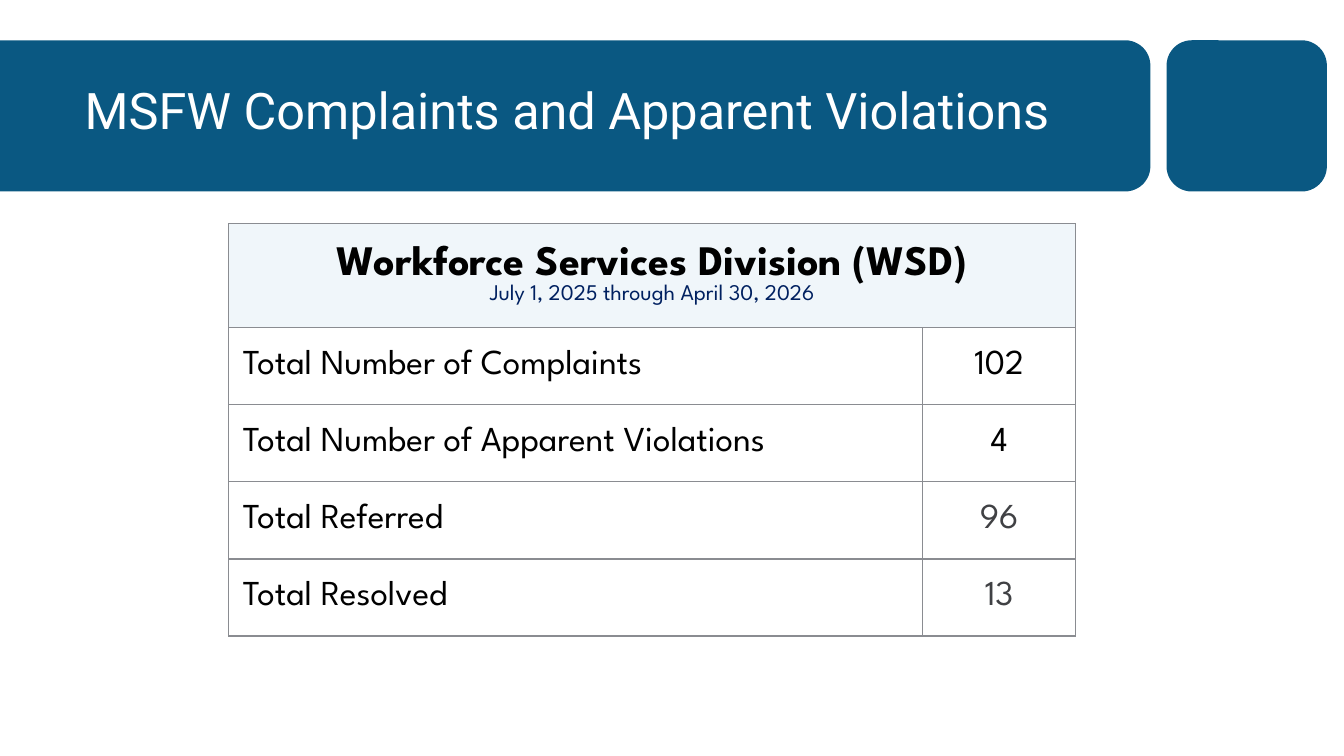
from math import cos, pi, sin

from lxml import etree
from pptx import Presentation
from pptx.dml.color import RGBColor
from pptx.enum.shapes import MSO_SHAPE
from pptx.enum.text import MSO_ANCHOR, MSO_AUTO_SIZE, PP_ALIGN
from pptx.oxml.ns import qn
from pptx.util import Inches, Pt

LEFT, CENTER = PP_ALIGN.LEFT, PP_ALIGN.CENTER
MIDDLE = MSO_ANCHOR.MIDDLE

THEME = {
    "band": "0A5882", "header_fill": "E3EFF6", "header_alpha": 51, "border": "8A8C91",
    "title": {"name": "Roboto", "size": Pt(36), "bold": False, "color": "FFFFFF"},
    "heading": {"name": "League Spartan", "size": Pt(30), "bold": True, "color": "000000"},
    "period": {"name": "League Spartan", "size": Pt(16), "bold": False, "color": "002060"},
    "body": {"name": "League Spartan", "size": Pt(25), "bold": False, "color": "000000"},
    "muted": {"name": "League Spartan", "size": Pt(25), "bold": False, "color": "404144"},
}


def write(p, text, style, align):
    """Put one formatted run into a paragraph."""
    p.alignment = align
    r = p.add_run()
    r.text = text
    for key, value in THEME[style].items():
        if key == "color":
            r.font.color.rgb = RGBColor.from_string(value)
        else:
            setattr(r.font, key, value)


def format_cell(cell):
    """Set margins, anchor, no fill and thin borders."""
    cell.margin_left = cell.margin_right = Inches(0.14)
    cell.margin_top = cell.margin_bottom = Inches(0.07)
    cell.vertical_anchor = MIDDLE
    cell.fill.background()
    tc_pr = cell._tc.get_or_add_tcPr()
    for i, side in enumerate(("a:lnL", "a:lnR", "a:lnT", "a:lnB")):
        ln = etree.Element(qn(side), w=str(Pt(1)))
        fill = etree.SubElement(ln, qn("a:solidFill"))
        etree.SubElement(fill, qn("a:srgbClr"), val=THEME["border"])
        tc_pr.insert(i, ln)


prs = Presentation()
prs.slide_width, prs.slide_height = Inches(13.33), Inches(7.5)
s = prs.slides.add_slide(prs.slide_layouts[5])

# Title band, rounded on the right, and the block beside it
TOP, HEIGHT, RADIUS = 0.4, 1.5, 0.25
BAND_RIGHT, GAP, BLOCK_WIDTH = 11.41, 0.16, 1.59
STEPS = 12
corners = [(TOP + RADIUS, -pi / 2), (TOP + HEIGHT - RADIUS, 0)]
outline = [(BAND_RIGHT - RADIUS + RADIUS * cos(start + pi / 2 * i / STEPS),
            cy + RADIUS * sin(start + pi / 2 * i / STEPS))
           for cy, start in corners for i in range(STEPS + 1)]
builder = s.shapes.build_freeform(0, Inches(TOP), scale=1.0)
builder.add_line_segments([(Inches(x), Inches(y)) for x, y in outline]
                          + [(0, Inches(TOP + HEIGHT))], close=True)
band = builder.convert_to_shape()
block = s.shapes.add_shape(MSO_SHAPE.ROUNDED_RECTANGLE, Inches(BAND_RIGHT + GAP), Inches(TOP),
                           Inches(BLOCK_WIDTH), Inches(HEIGHT))
block.adjustments[0] = RADIUS / HEIGHT
for sp in (band, block):
    sp.shadow.inherit = False
    sp.fill.solid()
    sp.fill.fore_color.rgb = RGBColor.from_string(THEME["band"])
    sp.line.fill.background()

# Title, brought in front of the band
title = s.shapes.title
title.left, title.top, title.width, title.height = map(Inches, (0.74, 0.53, 10.51, 1.18))
title.element.getparent().append(title.element)
tf = title.text_frame
tf.word_wrap = True
tf.auto_size = MSO_AUTO_SIZE.NONE
tf.vertical_anchor = MIDDLE
tf.paragraphs[0].line_spacing = 0.9
write(tf.paragraphs[0], "MSFW Complaints and Apparent Violations", "title", LEFT)

# Complaints table
totals = [
    ("Total Number of Complaints", "102", "body"),
    ("Total Number of Apparent Violations", "4", "body"),
    ("Total Referred", "96", "muted"),
    ("Total Resolved", "13", "muted"),
]
col_widths = (6.88, 1.52)
row_heights = [1.03] + [0.765] * len(totals)
table = s.shapes.add_table(len(row_heights), len(col_widths), Inches(2.27), Inches(2.22),
                           Inches(sum(col_widths)), Inches(sum(row_heights))).table
table.first_row = table.horz_banding = False
for column, width in zip(table.columns, col_widths):
    column.width = Inches(width)
for row, height in zip(table.rows, row_heights):
    row.height = Inches(height)
for cell in table.iter_cells():
    format_cell(cell)

# Header row across both columns, with a translucent fill
header = table.cell(0, 0)
header.merge(table.cell(0, 1))
header.fill.solid()
header.fill.fore_color.rgb = RGBColor.from_string(THEME["header_fill"])
color = header._tc.tcPr.find(qn("a:solidFill")).find(qn("a:srgbClr"))
etree.SubElement(color, qn("a:alpha"), val=str(THEME["header_alpha"] * 1000))
tf = header.text_frame
write(tf.paragraphs[0], "Workforce Services Division (WSD)", "heading", CENTER)
write(tf.add_paragraph(), "July 1, 2025 through April 30, 2026", "period", CENTER)

# Totals
for i, (label, value, value_style) in enumerate(totals, start=1):
    write(table.cell(i, 0).text_frame.paragraphs[0], label, "body", LEFT)
    write(table.cell(i, 1).text_frame.paragraphs[0], value, value_style, CENTER)

prs.save("out.pptx")
